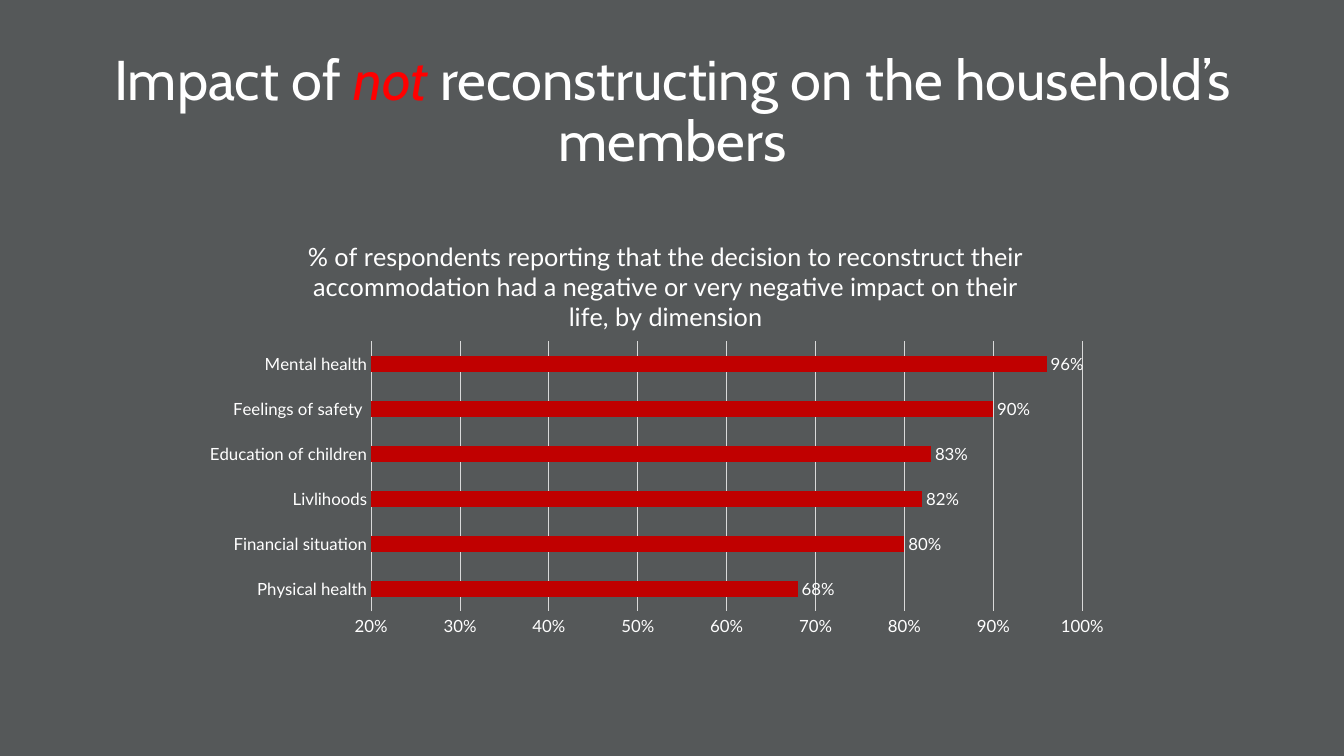
from lxml import etree
from pptx import Presentation
from pptx import util as u
from pptx.chart.data import CategoryChartData
from pptx.dml.color import RGBColor
from pptx.enum import chart as charts, text
from pptx.oxml import parse_xml
from pptx.oxml.ns import nsdecls, qn

SLIDE_W, SLIDE_H = u.Inches(13.33), u.Inches(7.5)
SLATE = RGBColor(0x55, 0x58, 0x59)
WHITE = RGBColor(0xFF, 0xFF, 0xFF)
RED = RGBColor(0xFF, 0x00, 0x00)
BAR_RED = RGBColor(0xC0, 0x00, 0x00)
GRID_GREY = RGBColor(0xD9, 0xD9, 0xD9)
HEADING_FONT, BODY_FONT = "Cabin", "Lato"

HEADING = [("Impact of ", False), ("not", True),
           (" reconstructing on the household’s members", False)]
CHART_TITLE = ("% of respondents reporting that the decision to reconstruct "
               "their accommodation had a negative or very negative impact on "
               "their life, by dimension")
IMPACTS = {
    "Physical health": 0.68,
    "Financial situation": 0.80,
    "Livlihoods": 0.82,
    "Education of children": 0.83,
    "Feelings of safety ": 0.90,
    "Mental health": 0.96,
}


def box(left, top, width, height):
    """Turn shares of the slide into a position and a size."""
    return (int(SLIDE_W * left), int(SLIDE_H * top),
            int(SLIDE_W * width), int(SLIDE_H * height))


def style_font(font, name, size):
    font.name, font.size, font.bold = name, u.Pt(size), False
    font.color.rgb = WHITE


def style_line(line):
    line.color.rgb, line.width = GRID_GREY, u.Pt(0.75)


def manual_layout(target=None, **shares):
    """Build a chart layout from shares of the chart's size."""
    layout = parse_xml(f"<c:layout {nsdecls('c')}><c:manualLayout/></c:layout>")
    parts = {"layoutTarget": target} if target else {}
    parts.update(xMode="edge", yMode="edge", **shares)
    for tag, value in parts.items():
        etree.SubElement(layout[0], qn(f"c:{tag}")).set("val", str(value))
    return layout


def add_heading(slide):
    frame = slide.shapes.add_textbox(*box(0.069, 0.053, 0.863, 0.193)).text_frame
    frame.word_wrap = True
    frame.vertical_anchor = text.MSO_ANCHOR.MIDDLE
    heading = frame.paragraphs[0]
    heading.alignment = text.PP_ALIGN.CENTER
    heading.line_spacing = 0.9
    style_font(heading.font, HEADING_FONT, 40)
    for words, stressed in HEADING:
        run = heading.add_run()
        run.text = words
        if stressed:
            run.font.italic = True
            run.font.color.rgb = RED


def style_axes(chart):
    for axis in (chart.category_axis, chart.value_axis):
        axis.major_tick_mark = axis.minor_tick_mark = charts.XL_TICK_MARK.NONE
        style_font(axis.tick_labels.font, BODY_FONT, 12)
    chart.category_axis.has_major_gridlines = False
    style_line(chart.category_axis.format.line)

    percent = chart.value_axis
    percent.minimum_scale, percent.maximum_scale, percent.major_unit = 0.2, 1, 0.1
    percent.tick_labels.number_format = "0%"
    percent.tick_labels.number_format_is_linked = False
    percent.format.line.fill.background()
    style_line(percent.major_gridlines.format.line)


def style_bars(plot):
    plot.gap_width = 182
    plot.vary_by_categories = False
    fill = plot.series[0].format.fill
    fill.solid()
    fill.fore_color.rgb = BAR_RED
    plot.has_data_labels = True
    labels = plot.data_labels
    labels.show_value = True
    labels.position = charts.XL_LABEL_POSITION.OUTSIDE_END
    labels.number_format, labels.number_format_is_linked = "0%", False
    style_font(labels.font, BODY_FONT, 12)


def set_chart_title(chart):
    chart.has_title = True
    title = chart.chart_title
    title.include_in_layout = False
    caption = title.text_frame.paragraphs[0]
    caption.text = CHART_TITLE
    caption.alignment = text.PP_ALIGN.CENTER
    style_font(caption.font, BODY_FONT, 18)
    for old in title._element.findall(qn("c:layout")):
        title._element.remove(old)
    title._element.find(qn("c:tx")).addnext(manual_layout(x=0.12, y=0.05))


def add_impact_chart(slide):
    data = CategoryChartData(number_format="0%")
    data.categories = list(IMPACTS)
    data.add_series("Series 1", list(IMPACTS.values()))
    chart = slide.shapes.add_chart(charts.XL_CHART_TYPE.BAR_CLUSTERED,
                                   *box(0.1425, 0.28, 0.6925, 0.571), data).chart
    chart.has_legend = False
    style_font(chart.font, BODY_FONT, 12)
    set_chart_title(chart)
    style_axes(chart)
    style_bars(chart.plots[0])

    plot_area = chart._chartSpace.chart.plotArea
    for old in plot_area.findall(qn("c:layout")):
        plot_area.remove(old)
    plot_area.insert(0, manual_layout("inner", x=0.193, y=0.3, w=0.764, h=0.626))


def main():
    deck = Presentation()
    deck.slide_width, deck.slide_height = SLIDE_W, SLIDE_H
    slide = deck.slides.add_slide(deck.slide_layouts[6])
    backdrop = slide.background.fill
    backdrop.solid()
    backdrop.fore_color.rgb = SLATE
    add_heading(slide)
    add_impact_chart(slide)
    deck.save("out.pptx")


if __name__ == "__main__":
    main()
